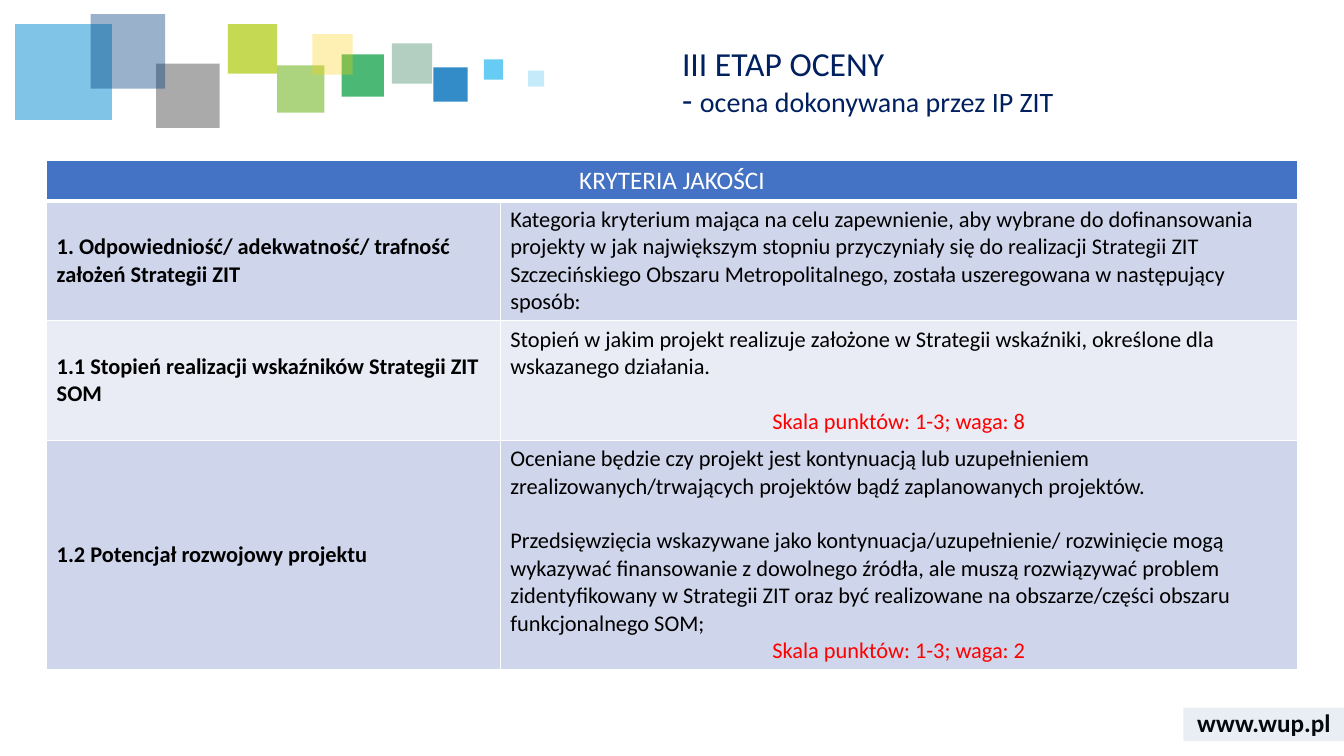
from lxml import etree
from pptx import Presentation
from pptx.dml.color import RGBColor
from pptx.enum.shapes import MSO_SHAPE
from pptx.enum.text import MSO_ANCHOR, MSO_AUTO_SIZE, PP_ALIGN
from pptx.oxml.ns import qn
from pptx.util import Pt

RECT = MSO_SHAPE.RECTANGLE
TOP, MIDDLE = MSO_ANCHOR.TOP, MSO_ANCHOR.MIDDLE
LEFT, CENTER = PP_ALIGN.LEFT, PP_ALIGN.CENTER
NO_FIT = MSO_AUTO_SIZE.NONE
TITLE_ONLY = 5
FONT = "Calibri"
BLANK_LINE = 19.5  # one 16 pt line, used as a gap

# Header squares: left, top, width, height, colour, opacity in percent
SQUARES = [
    (280, 31, 28.8, 28.8, "006138", 30),
    (309.6, 48.2, 24.5, 24.5, "006EB9", 80),
    (244.1, 38.9, 30.2, 30.2, "009A3C", 70),
    (10.8, 17.3, 69.1, 68.4, "028BD3", 50),
    (198, 46.8, 33.8, 33.8, "75B82A", 60),
    (111.6, 45.4, 45.4, 46, "575757", 50),
    (64.8, 10.1, 53.3, 53.3, "003D7C", 40),
    (345.6, 42.5, 13.7, 14.4, "40C0F1", 80),
    (162.7, 17.3, 35.3, 35.3, "AFCA0B", 70),
    (223.2, 24.5, 28.8, 28.8, "FED000", 30),
    (377.3, 50.4, 11.5, 11.5, "40C0F1", 30),
]

# Criteria: row height, fill, name, description paragraphs, score, gap before score
CRITERIA = [
    (85.5, "CFD5EA", "1. Odpowiedniość/ adekwatność/ trafność założeń Strategii ZIT",
     [("Kategoria kryterium mająca na celu zapewnienie, aby wybrane do dofinansowania", 0),
      ("projekty w jak największym stopniu przyczyniały się do realizacji Strategii ZIT", 0),
      ("Szczecińskiego Obszaru Metropolitalnego, została uszeregowana w następujący", 0),
      ("sposób:", 0)], None, 0),
    (85.5, "E9EBF5", "1.1 Stopień realizacji wskaźników Strategii ZIT SOM",
     [("Stopień w jakim projekt realizuje założone w Strategii wskaźniki, określone dla", 0),
      ("wskazanego działania.", 0)], "Skala punktów: 1-3; waga: 8", BLANK_LINE),
    (163.4, "CFD5EA", "1.2 Potencjał rozwojowy projektu",
     [("Oceniane będzie czy projekt jest kontynuacją lub uzupełnieniem "
       "zrealizowanych/trwających projektów bądź zaplanowanych projektów.", 0),
      ("Przedsięwzięcia wskazywane jako kontynuacja/uzupełnienie/ rozwinięcie mogą", BLANK_LINE),
      ("wykazywać finansowanie z dowolnego źródła, ale muszą rozwiązywać problem "
       "zidentyfikowany w Strategii ZIT oraz być realizowane na obszarze/części obszaru "
       "funkcjonalnego SOM;", 0)], "Skala punktów: 1-3; waga: 2", 0),
]


def rgb(value):
    return RGBColor.from_string(value)


def set_font(font, color, **values):
    for name, value in {"name": FONT, "bold": False, **values}.items():
        setattr(font, name, value)
    font.color.rgb = rgb(color)


def add_rect(slide, left, top, width, height, color, opacity):
    sp = slide.shapes.add_shape(RECT, Pt(left), Pt(top), Pt(width), Pt(height))
    sp.shadow.inherit = False
    sp.line.fill.background()
    sp.fill.solid()
    sp.fill.fore_color.rgb = rgb(color)
    clr = sp.fill._xPr.find(".//" + qn("a:srgbClr"))
    etree.SubElement(clr, qn("a:alpha"), val=str(opacity * 1000))


def add_paragraph(tf, first, text, color="000000", size=16, bold=False,
                  align=LEFT, before=0):
    p = tf.paragraphs[0] if first else tf.add_paragraph()
    p.alignment = align
    if before and not first:
        p.space_before = Pt(before)
    r = p.add_run()
    r.text = text
    set_font(r.font, color, size=Pt(size), bold=bold)


def format_cell(cell, color, anchor, bottom=1):
    cell.vertical_anchor = anchor
    cell.fill.solid()
    cell.fill.fore_color.rgb = rgb(color)
    tcPr = cell._tc.get_or_add_tcPr()
    borders = {"a:lnL": 1, "a:lnR": 1, "a:lnT": 1, "a:lnB": bottom}
    for i, (tag, width) in enumerate(borders.items()):
        ln = etree.Element(qn(tag), w=str(Pt(width)))
        fill = etree.SubElement(ln, qn("a:solidFill"))
        etree.SubElement(fill, qn("a:srgbClr"), val="FFFFFF")
        tcPr.insert(i, ln)


def add_title(slide):
    sp = slide.shapes.title
    sp.left, sp.top, sp.width, sp.height = Pt(480), Pt(30), Pt(458), Pt(40)
    tf = sp.text_frame
    for name, value in {"word_wrap": True, "auto_size": NO_FIT,
                        "vertical_anchor": TOP}.items():
        setattr(tf, name, value)
    p = tf.paragraphs[0]
    p.alignment, p.line_spacing = LEFT, 0.9
    for i, (text, size) in enumerate([("III ETAP OCENY", 24), ("- ", 24),
                                      ("ocena dokonywana przez IP ZIT", 20)]):
        if i == 1:
            p.add_line_break()
        r = p.add_run()
        r.text = text
        set_font(r.font, "002060", size=Pt(size))


def add_address(slide):
    s = slide.shapes.add_textbox(Pt(845.3), Pt(501.8), Pt(115), Pt(29))
    tf = s.text_frame
    tf.word_wrap, tf.vertical_anchor = True, MIDDLE
    add_paragraph(tf, True, "www.wup.pl", size=18, bold=True, align=CENTER)
    add_rect(slide, 845.3, 505.4, 115, 23.8, "2F5597", 10)


def add_criteria_table(slide):
    heights = [28.8] + [row[0] for row in CRITERIA]
    table = slide.shapes.add_table(len(heights), 2, Pt(33.3), Pt(114.8),
                                   Pt(893.5), Pt(sum(heights))).table
    table.first_row = table.horz_banding = False
    for col, width in zip(table.columns, (324, 569.5)):
        col.width = Pt(width)
    for row, height in zip(table.rows, heights):
        row.height = Pt(height)

    # Header across both columns
    header = table.cell(0, 0)
    header.merge(table.cell(0, 1))
    for col in range(2):
        format_cell(table.cell(0, col), "4472C4", TOP, bottom=3)
    add_paragraph(header.text_frame, True, "KRYTERIA JAKOŚCI", "FFFFFF", 18, align=CENTER)

    # One row per criterion
    for i, (_, color, name, description, score, gap) in enumerate(CRITERIA, 1):
        left, right = table.cell(i, 0), table.cell(i, 1)
        format_cell(left, color, MIDDLE)
        format_cell(right, color, TOP)
        add_paragraph(left.text_frame, True, name, bold=True)
        for j, (text, before) in enumerate(description):
            add_paragraph(right.text_frame, j == 0, text, before=before)
        if score:
            add_paragraph(right.text_frame, False, score, "FF0000", align=CENTER, before=gap)


def main():
    prs = Presentation()
    prs.slide_width, prs.slide_height = Pt(960), Pt(540)
    slide = prs.slides.add_slide(prs.slide_layouts[TITLE_ONLY])
    add_address(slide)
    for square in SQUARES:
        add_rect(slide, *square)
    add_criteria_table(slide)
    add_title(slide)
    prs.save("out.pptx")


if __name__ == "__main__":
    main()
